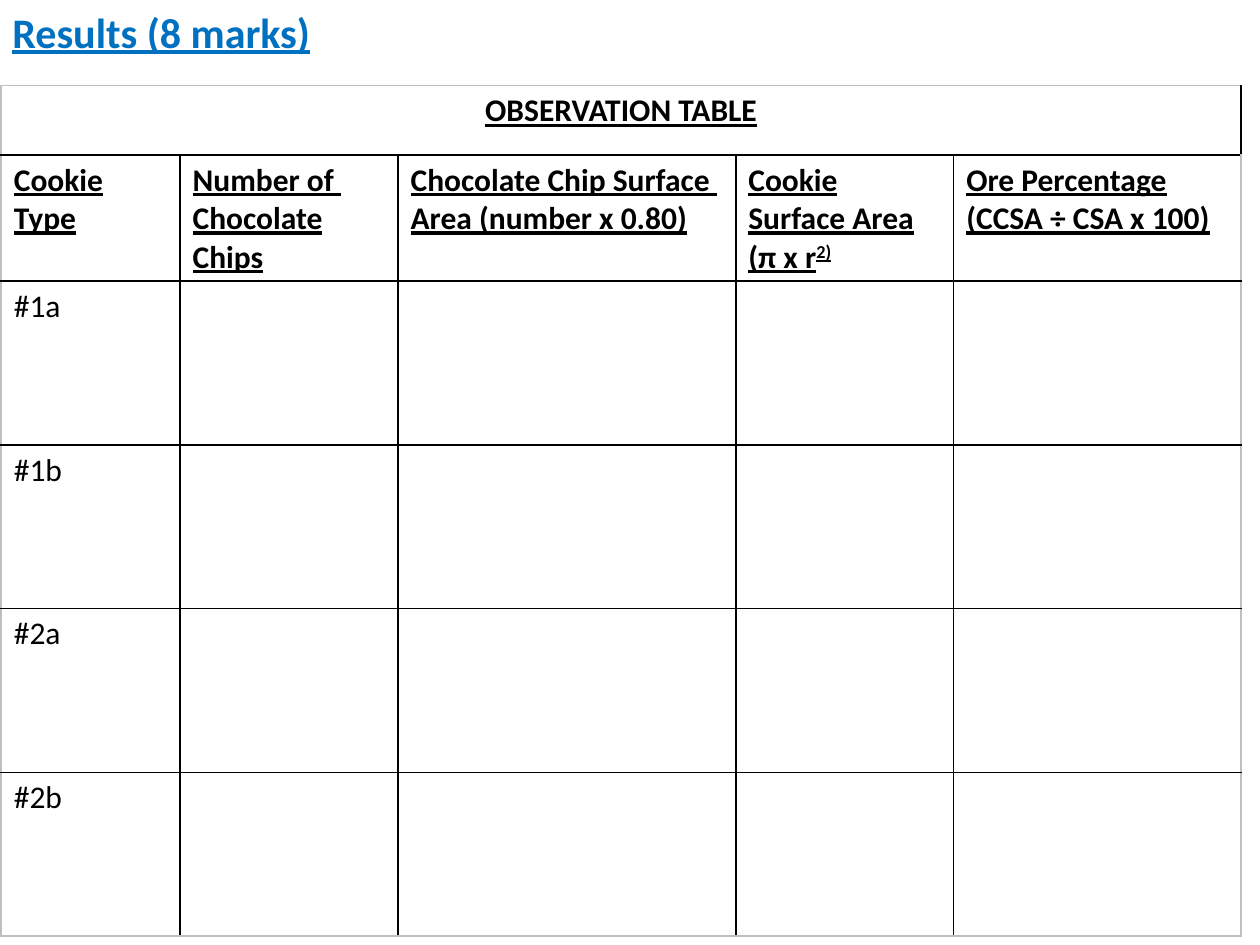
from dataclasses import dataclass

from lxml import etree
from pptx import Presentation
from pptx.dml.color import RGBColor
from pptx.enum.text import MSO_AUTO_SIZE, PP_ALIGN
from pptx.oxml.ns import qn
from pptx.util import Inches, Pt

CENTER = PP_ALIGN.CENTER
GROW = MSO_AUTO_SIZE.SHAPE_TO_FIT_TEXT


@dataclass(frozen=True)
class Theme:
    font: str = "Calibri"
    head: int = 24
    body: int = 18
    blue: str = "0070C0"
    ink: str = "000000"
    edge: str = "BFBFBF"
    line: float = 1


THEME = Theme()
COLS = (1.42, 1.73, 2.68, 1.73, 2.28)
ROWS = (0.55, 1) + (1.3,) * 4
TITLE = "OBSERVATION TABLE"
HEADS = (
    "Cookie Type",
    "Number of \nChocolate Chips",
    "Chocolate Chip Surface \nArea (number x 0.80)",
    "Cookie Surface Area (π x r",
    "Ore Percentage (CCSA ÷ CSA x 100)",
)
POWER = "2)"
AREA = 3
TYPES = ("#1a", "#1b", "#2a", "#2b")


def style(frame, size, color, strong):
    for para in frame.paragraphs:
        para.font.size = Pt(size)
        for run in para.runs:
            font = run.font
            font.name, font.size = THEME.font, Pt(size)
            font.bold = font.underline = strong
            font.color.rgb = RGBColor.from_string(color)


def border(cell, row, col):
    """Rule the cell: grey on the table's rim, ink inside."""
    rim = {
        "a:lnL": col == 0,
        "a:lnR": col == len(COLS) - 1,
        "a:lnT": row == 0,
        "a:lnB": row == len(ROWS) - 1,
    }
    props = cell._tc.get_or_add_tcPr()
    for place, (tag, outer) in enumerate(rim.items()):
        line = etree.Element(qn(tag), w=str(Pt(THEME.line)))
        fill = etree.SubElement(line, qn("a:solidFill"))
        color = THEME.edge if outer else THEME.ink
        etree.SubElement(fill, qn("a:srgbClr"), val=color)
        props.insert(place, line)


def add_head(slide, left, top, width, height):
    box = slide.shapes.add_textbox(*map(Inches, (left, top, width, height)))
    frame = box.text_frame
    frame.word_wrap = True
    frame.auto_size = GROW
    frame.text = "Results (8 marks)"
    style(frame, THEME.head, THEME.blue, True)


def add_grid(slide, left, top):
    size = map(Inches, (left, top, sum(COLS), sum(ROWS)))
    grid = slide.shapes.add_table(len(ROWS), len(COLS), *size).table
    grid.first_row = grid.horz_banding = False
    for part, width in zip(grid.columns, COLS):
        part.width = Inches(width)
    for part, height in zip(grid.rows, ROWS):
        part.height = Inches(height)

    grid.cell(0, 0).merge(grid.cell(0, len(COLS) - 1))
    words = [(TITLE,), HEADS] + [(kind,) for kind in TYPES]
    for row, texts in enumerate(words):
        for col, text in enumerate(texts):
            grid.cell(row, col).text_frame.text = text
    grid.cell(0, 0).text_frame.paragraphs[0].alignment = CENTER
    power = grid.cell(1, AREA).text_frame.paragraphs[0].add_run()
    power.text = POWER
    power.font._element.set("baseline", "30000")

    for row in range(len(ROWS)):
        for col in range(len(COLS)):
            cell = grid.cell(row, col)
            cell.fill.background()
            border(cell, row, col)
            style(cell.text_frame, THEME.body, THEME.ink, row < 2)


def main():
    deck = Presentation()
    deck.slide_width, deck.slide_height = Inches(10), Inches(7.5)
    slide = deck.slides.add_slide(deck.slide_layouts[6])
    add_head(slide, 0, 0, 3.27, 0.5)
    add_grid(slide, 0.01, 0.68)
    deck.save("out.pptx")


if __name__ == "__main__":
    main()
